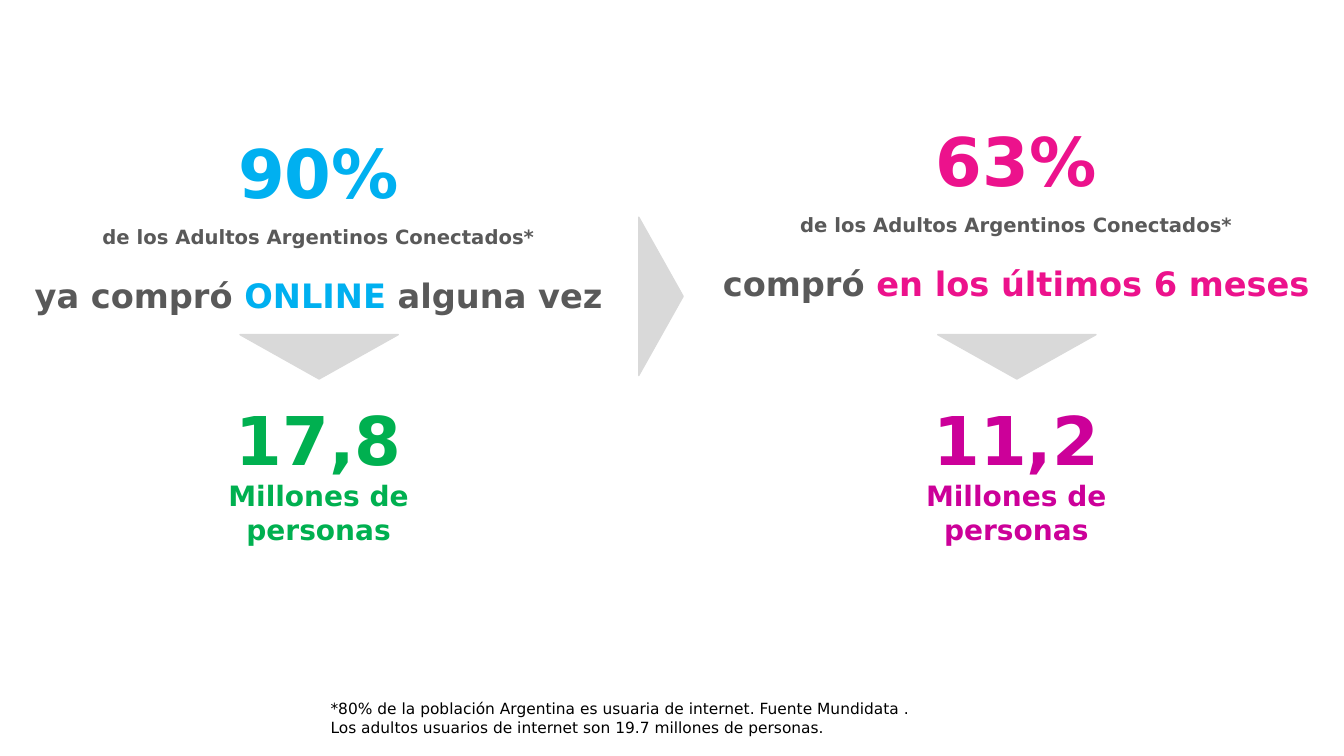
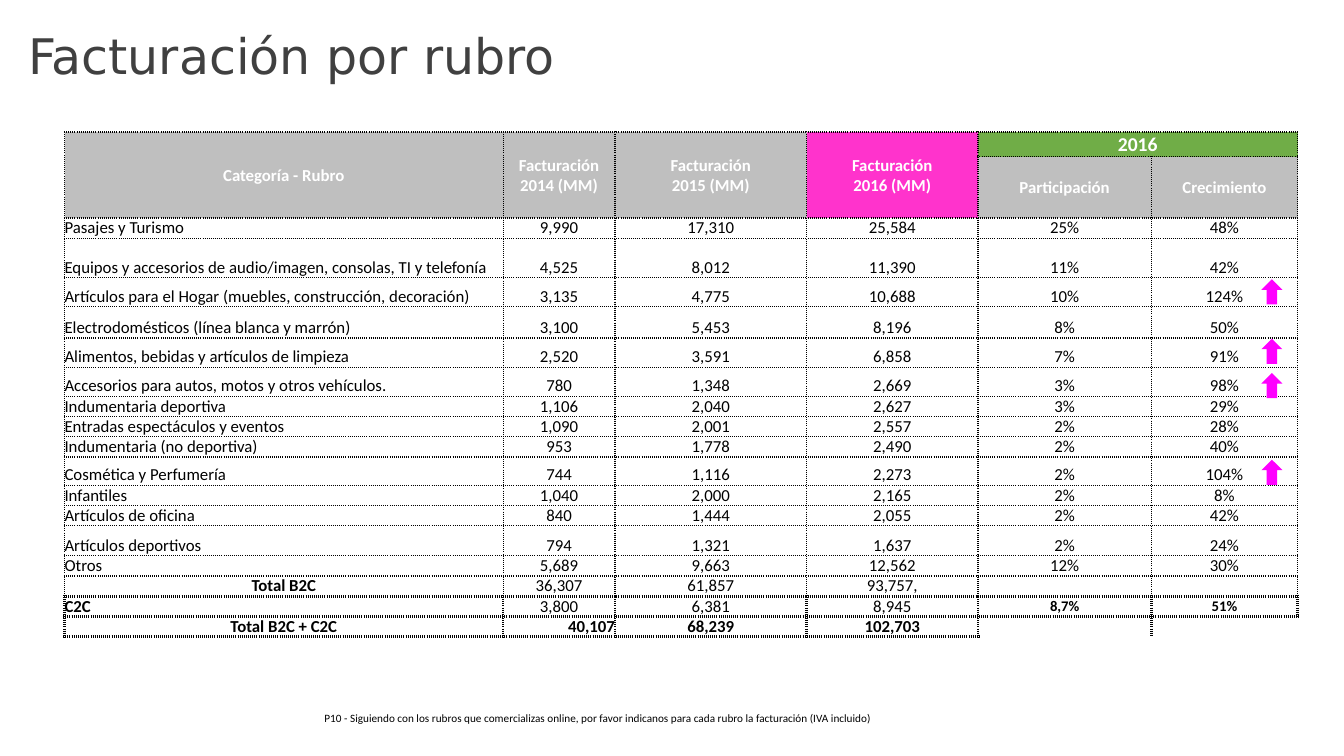
from lxml import etree
from pptx import Presentation
from pptx.dml.color import RGBColor
from pptx.enum.shapes import MSO_SHAPE as SHAPE
from pptx.enum.text import MSO_ANCHOR as ANCHOR, PP_ALIGN as ALIGN
from pptx.oxml.ns import qn
from pptx.util import Inches, Pt

HEADING_FONT, TABLE_FONT = "DejaVu Sans", "Calibri"
BLACK, WHITE, DARK, TITLE_GREY = "000000", "FFFFFF", "595959", "404040"
TRIANGLE_GREY, HEADER_GREY = "D9D9D9", "BFBFBF"
BLUE, GREEN, PINK, PURPLE = "00B0F0", "00B050", "EC128C", "CC0099"
HEADER_PINK, HEADER_GREEN, MAGENTA = "FF33CC", "70AD47", "FF00FF"
NO_STYLE = "{2D5ABB26-0587-4C30-8999-92F81FD0307C}"

PANELS = [
    dict(center=3.16, top=1.25, percent="90%", accent=BLUE,
         claim=[("ya compró ", DARK), ("ONLINE", BLUE), (" alguna vez", DARK)],
         millions="17,8", total=GREEN),
    dict(center=10.08, top=1.13, percent="63%", accent=PINK,
         claim=[("compró ", DARK), ("en los últimos 6 meses", PINK)],
         millions="11,2", total=PURPLE),
]
AUDIENCE = "de los Adultos Argentinos Conectados*"
UNIT = "Millones de personas"
INTERNET_NOTE = [
    "*80% de la población Argentina es usuaria de internet. Fuente Mundidata .",
    "Los adultos usuarios de internet son 19.7 millones de personas.",
]

TITLE = "Facturación por rubro"
QUESTION = ("P10 - Siguiendo con los rubros que comercializas online, por favor "
            "indicanos para cada rubro la facturación (IVA incluido)")
HEADERS = [
    ("Categoría - Rubro", HEADER_GREY),
    ("Facturación 2014 (MM)", HEADER_GREY),
    ("Facturación\n2015 (MM)", HEADER_GREY),
    ("Facturación\n2016 (MM)", HEADER_PINK),
]
YEAR = "2016"
YEAR_HEADERS = ["Participación", "Crecimiento"]
CATEGORIES = [
    ("Pasajes y Turismo", "9,990", "17,310", "25,584", "25%", "48%"),
    ("Equipos y accesorios de audio/imagen, consolas, TI y telefonía",
     "4,525", "8,012", "11,390", "11%", "42%"),
    ("Artículos para el Hogar (muebles, construcción, decoración)",
     "3,135", "4,775", "10,688", "10%", "124%"),
    ("Electrodomésticos (línea blanca y marrón)", "3,100", "5,453", "8,196", "8%", "50%"),
    ("Alimentos, bebidas y artículos de limpieza", "2,520", "3,591", "6,858", "7%", "91%"),
    ("Accesorios para autos, motos y otros vehículos.", "780", "1,348", "2,669", "3%", "98%"),
    ("Indumentaria deportiva", "1,106", "2,040", "2,627", "3%", "29%"),
    ("Entradas espectáculos y eventos", "1,090", "2,001", "2,557", "2%", "28%"),
    ("Indumentaria (no deportiva)", "953", "1,778", "2,490", "2%", "40%"),
    ("Cosmética y Perfumería", "744", "1,116", "2,273", "2%", "104%"),
    ("Infantiles", "1,040", "2,000", "2,165", "2%", "8%"),
    ("Artículos de oficina", "840", "1,444", "2,055", "2%", "42%"),
    ("Artículos deportivos", "794", "1,321", "1,637", "2%", "24%"),
    ("Otros", "5,689", "9,663", "12,562", "12%", "30%"),
]
TOTAL_B2C = ("Total B2C", "36,307", "61,857", "93,757,", "", "")
C2C = ("C2C", "3,800", "6,381", "8,945", "8,7%", "51%")
GRAND_TOTAL = ("Total B2C + C2C", "40,107", "68,239", "102,703", "", "")
COLUMN_WIDTHS = [4.35, 1.11, 1.9, 1.7, 1.72, 1.45]
ROW_HEIGHTS = [0.19, 0.61, 0.2, 0.39, 0.29, 0.31, 0.29, 0.29, 0.2, 0.2,
               0.17, 0.28, 0.2, 0.2, 0.3, 0.2, 0.2, 0.2, 0.2]
GROWTH_ARROW_TOPS = [2.77, 3.36, 3.7, 4.56]


def rgb(value):
    return RGBColor.from_string(value)


def style(run, size, color, bold=False, font=HEADING_FONT):
    run.font.size, run.font.bold, run.font.name = Pt(size), bold, font
    run.font.color.rgb = rgb(color)


def add_text(slide, box, lines, align=ALIGN.LEFT, anchor=ANCHOR.TOP,
             bold=False, font=HEADING_FONT):
    frame = slide.shapes.add_textbox(*map(Inches, box)).text_frame
    frame.word_wrap, frame.vertical_anchor = True, anchor
    for index, (size, parts) in enumerate(lines):
        paragraph = frame.add_paragraph() if index else frame.paragraphs[0]
        paragraph.alignment = align
        for words, color in parts:
            run = paragraph.add_run()
            run.text = words
            style(run, size, color, bold, font)


def add_figure(slide, kind, box, color, rotation=0, outlined=False):
    figure = slide.shapes.add_shape(kind, *map(Inches, box))
    figure.shadow.inherit = False
    figure.rotation = rotation
    figure.fill.solid()
    figure.fill.fore_color.rgb = rgb(color)
    if outlined:
        figure.line.color.rgb = rgb(color)
        figure.line.width = Pt(1)
    else:
        figure.line.fill.background()


def add_triangle(slide, center, top, rotation):
    add_figure(slide, SHAPE.ISOSCELES_TRIANGLE, (center - 0.78, top, 1.57, 0.44),
               TRIANGLE_GREY, rotation, outlined=True)


def add_panel(slide, panel):
    center, top = panel["center"], panel["top"]
    rows = [
        (0, 2.6, 0.91, 48, [(panel["percent"], panel["accent"])]),
        (0.93, 5.2, 0.34, 14, [(AUDIENCE, DARK)]),
        (1.43, 6.16, 0.5, 24, panel["claim"]),
    ]
    for offset, width, height, size, parts in rows:
        add_text(slide, (center - width / 2, top + offset, width, height),
                 [(size, parts)], ALIGN.CENTER, ANCHOR.MIDDLE, bold=True)
    add_triangle(slide, center, 3.32, 180)
    add_text(slide, (center - 1.66, 3.9, 3.32, 1.3),
             [(48, [(panel["millions"], panel["total"])]),
              (20, [(UNIT, panel["total"])])], ALIGN.CENTER, bold=True)


def set_borders(cell, widths):
    properties = cell._tc.get_or_add_tcPr()
    sides = [side for side in "LRTB" if side in widths]
    for position, side in enumerate(sides):
        line = etree.Element(qn(f"a:ln{side}"), w=str(Pt(widths[side])))
        fill = etree.SubElement(line, qn("a:solidFill"))
        etree.SubElement(fill, qn("a:srgbClr"), val=BLACK)
        etree.SubElement(line, qn("a:prstDash"), val="sysDot")
        properties.insert(position, line)


def fill_cell(cell, words, size=12, color=BLACK, bold=False, align=ALIGN.CENTER,
              anchor=ANCHOR.BOTTOM, background=None):
    inset = Inches(0.01 if background else 0)
    cell.margin_left = cell.margin_right = cell.margin_top = inset
    cell.margin_bottom = 0
    cell.vertical_anchor = anchor
    cell.text_frame.text = words
    for paragraph in cell.text_frame.paragraphs:
        paragraph.alignment = align
        for run in paragraph.runs:
            style(run, size, color, bold, TABLE_FONT)
        if not words:
            etree.SubElement(paragraph._p, qn("a:endParaRPr"), sz=str(size * 100))
    if background:
        cell.fill.solid()
        cell.fill.fore_color.rgb = rgb(background)


def add_headers(table):
    look = dict(color=WHITE, bold=True, anchor=ANCHOR.MIDDLE)
    for column, (words, background) in enumerate(HEADERS):
        table.cell(0, column).merge(table.cell(1, column))
        fill_cell(table.cell(0, column), words, background=background, **look)
    first = len(HEADERS)
    table.cell(0, first).merge(table.cell(0, first + 1))
    fill_cell(table.cell(0, first), YEAR, size=14, background=HEADER_GREEN, **look)
    for column, words in enumerate(YEAR_HEADERS, first):
        fill_cell(table.cell(1, column), words, background=HEADER_GREY, **look)


def body_format(row, column):
    look = {}
    if column == 0:
        look["bold"] = row in (TOTAL_B2C, C2C, GRAND_TOTAL)
        if row not in (TOTAL_B2C, GRAND_TOTAL):
            look["align"] = ALIGN.LEFT
    elif row is GRAND_TOTAL:
        look["bold"] = True
        if column == 1:
            look["align"] = ALIGN.RIGHT
    elif row is C2C and column > 3:
        look.update(size=10.5, bold=True, anchor=ANCHOR.MIDDLE)
    return look


def border_widths(row, column):
    if row is GRAND_TOTAL and column > 3:
        return {"L": 2.25, "T": 2.25} if column == 4 else {"T": 2.25}
    if row in (C2C, GRAND_TOTAL):
        return dict.fromkeys("LRTB", 2.25)
    return dict.fromkeys("LRT", 1) | {"B": 2.25 if row is TOTAL_B2C else 1}


def add_billing_table(slide):
    table = slide.shapes.add_table(
        len(ROW_HEIGHTS), len(COLUMN_WIDTHS), Inches(0.64), Inches(1.31),
        Inches(sum(COLUMN_WIDTHS)), Inches(sum(ROW_HEIGHTS))).table
    table._tbl.tblPr[0].text = NO_STYLE
    table.first_row = table.horz_banding = False
    for column, width in zip(table.columns, COLUMN_WIDTHS):
        column.width = Inches(width)
    for row, height in zip(table.rows, ROW_HEIGHTS):
        row.height = Inches(height)
    add_headers(table)
    body = [None, None, *CATEGORIES, TOTAL_B2C, C2C, GRAND_TOTAL]
    for index, row in enumerate(body):
        for column in range(len(COLUMN_WIDTHS)):
            cell = table.cell(index, column)
            if row:
                fill_cell(cell, row[column], **body_format(row, column))
            set_borders(cell, border_widths(row, column))


def build_shoppers(slide):
    for panel in PANELS:
        add_panel(slide, panel)
    add_triangle(slide, 6.55, 2.72, 90)
    add_text(slide, (3.18, 6.89, 6.16, 0.47),
             [(11, [(line, BLACK)]) for line in INTERNET_NOTE])


def build_billing(slide):
    add_billing_table(slide)
    add_text(slide, (0.18, 0.2, 12.33, 0.69), [(35, [(TITLE, TITLE_GREY)])])
    for top in GROWTH_ARROW_TOPS:
        add_figure(slide, SHAPE.UP_ARROW, (12.51, top, 0.21, 0.25), MAGENTA)
    add_text(slide, (3.12, 7.01, 6.67, 0.37), [(8, [(QUESTION, BLACK)])], font=TABLE_FONT)


def main():
    deck = Presentation()
    deck.slide_width, deck.slide_height = Inches(13.33), Inches(7.5)
    for build in (build_shoppers, build_billing):
        build(deck.slides.add_slide(deck.slide_layouts[6]))
    deck.save("out.pptx")


if __name__ == "__main__":
    main()
